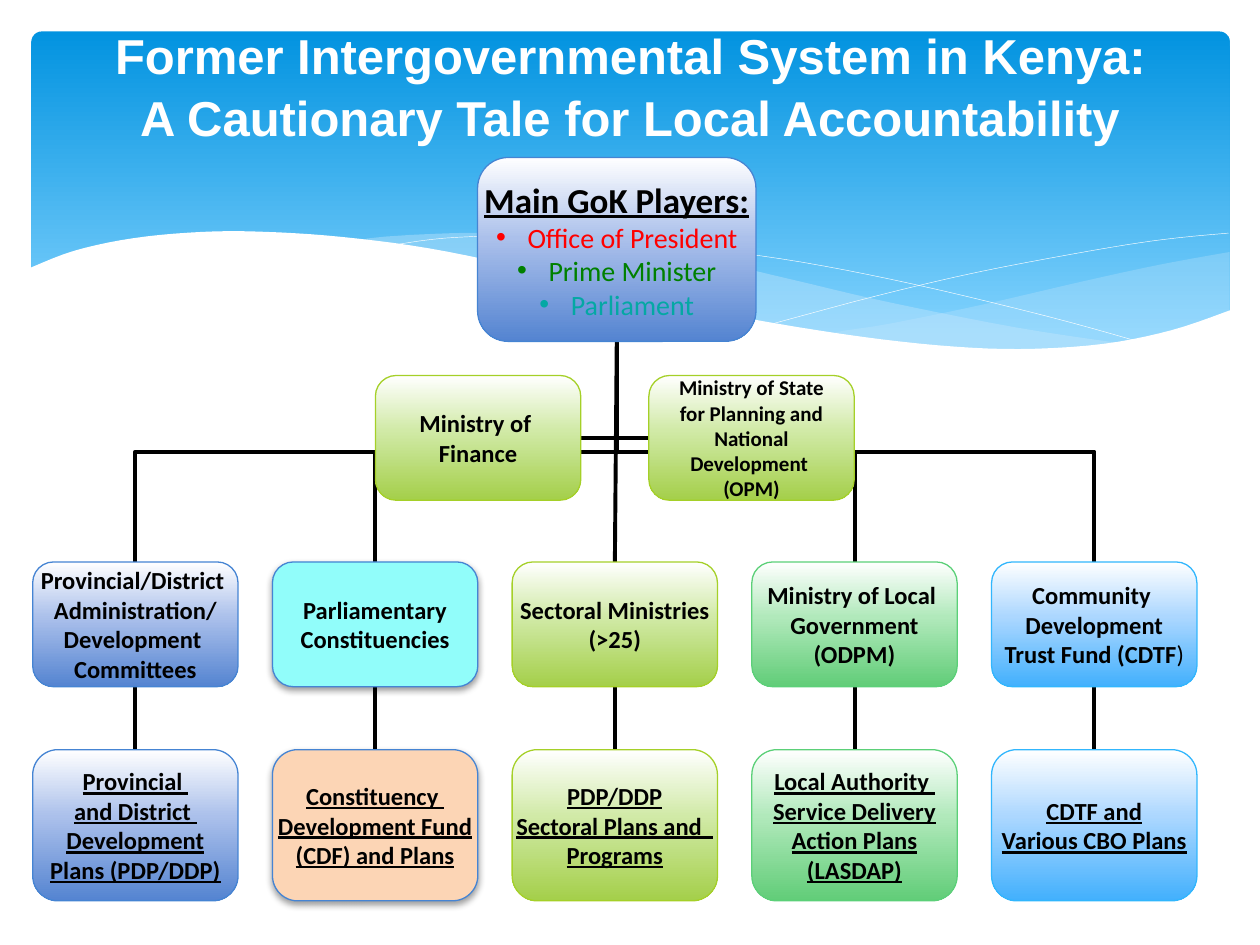
from dataclasses import dataclass

from lxml import etree
from pptx import Presentation
from pptx.dml.color import RGBColor
from pptx.enum.shapes import MSO_CONNECTOR, MSO_SHAPE
from pptx.enum.text import MSO_ANCHOR, PP_ALIGN
from pptx.oxml.ns import qn
from pptx.util import Inches, Pt

ROUNDED = MSO_SHAPE.ROUNDED_RECTANGLE
STRAIGHT, ELBOW = MSO_CONNECTOR.STRAIGHT, MSO_CONNECTOR.ELBOW
MIDDLE, CENTER = MSO_ANCHOR.MIDDLE, PP_ALIGN.CENTER
TOP, BOTTOM = 0, 2


@dataclass(frozen=True)
class Theme:
    """Colours, fonts and type sizes of the slide."""
    body_font: str = "Calibri"
    title_font: str = "Arial"
    title: int = 28
    title_lead: int = 36
    heading: int = 20
    player: int = 16
    label: int = 14
    small: int = 12
    black: str = "000000"
    white: str = "FFFFFF"
    red: str = "FF0000"
    dark_green: str = "008000"
    teal: str = "04A8A4"
    mist: str = "C6E7FC"
    banner: tuple = ((0, "0293E0"), (90, "83D3FE"))
    blue: tuple = (((0, "FFFFFF"), (44, "ABC0EB"), (100, "5484D1")), "4584D3")
    lime: tuple = (((0, "FFFFFF"), (44, "D1EAA7"), (100, "A4CF4A")), "A5D028")
    green: tuple = (((0, "FFFFFF"), (44, "B1E9BB"), (100, "61CD78")), "5BD078")
    sky: tuple = (((0, "FFFFFF"), (44, "ACD7FF"), (100, "42B0FD")), "31B6FD")
    cyan: tuple = ("91FDFA", "4584D3")
    peach: tuple = ("FCD5B5", "4584D3")


THEME = Theme()

RIGHT_WAVE = [(9.76, 2), (9.21, 2.1), (8.61, 2.23), (7.79, 2.42), (7.06, 2.57), (6.61, 2.65),
              (7.05, 2.71), (7.57, 2.76), (8.14, 2.78), (8.72, 2.74), (9.21, 2.65), (9.76, 2.47)]
LONG_WAVE = [(8.93, 2.73), (8.07, 2.6), (7.06, 2.4), (6.29, 2.22), (5.55, 2.05), (4.89, 1.94),
             (4.2, 1.87), (3.61, 1.85), (2.86, 1.91), (3.62, 2.03), (4.49, 2.22), (5.3, 2.4),
             (6.18, 2.58), (6.95, 2.7), (7.61, 2.77), (8.28, 2.78), (8.93, 2.73)]
FALLING_LINE = [(3.09, 1.95), (3.53, 1.89), (4.16, 1.87), (4.89, 1.9), (5.56, 1.97),
                (6.36, 2.08), (7.27, 2.26), (8.31, 2.51), (9.07, 2.72)]
RISING_LINE = [(6.13, 2.57), (6.95, 2.35), (7.76, 2.16), (8.66, 1.99), (9.24, 1.9), (9.75, 1.85)]
WHITE_WAVE = [(9.77, 2.46), (9.3, 2.62), (8.75, 2.73), (8.09, 2.77), (7.44, 2.74), (6.68, 2.65),
              (5.79, 2.5), (5.03, 2.33), (4.18, 2.13), (3.4, 1.97), (2.71, 1.88), (2.11, 1.84),
              (1.61, 1.84), (1.06, 1.89), (0.59, 1.99), (0.23, 2.13)]


def rgb(color):
    """Turn a hex string into a colour."""
    return RGBColor.from_string(color)


def append(parent, tag, **attributes):
    """Append a DrawingML element with the given attributes."""
    values = {name: str(value) for name, value in attributes.items()}
    return etree.SubElement(parent, qn(tag), values)


def paint(shape, fill):
    """Fill a shape with one colour, or downwards with gradient stops."""
    if isinstance(fill, str):
        shape.fill.solid()
        shape.fill.fore_color.rgb = rgb(fill)
        return
    shape.fill.gradient()
    shape.fill.gradient_angle = 270
    stops = shape.element.spPr.find(".//" + qn("a:gsLst"))
    for stop in list(stops):
        stops.remove(stop)
    for position, color in fill:
        append(append(stops, "a:gs", pos=position * 1000), "a:srgbClr", val=color)


def smooth_points(points, steps=5):
    """Interpolate a Catmull-Rom curve through the points."""
    padded = [points[0], *points, points[-1]]
    curve = [points[0]]
    for a, b, c, d in zip(padded, padded[1:], padded[2:], padded[3:]):
        for step in range(1, steps + 1):
            t = step / steps
            curve.append(tuple(
                0.5 * (2 * q + (r - p) * t + (2 * p - 5 * q + 4 * r - s) * t ** 2
                       + (3 * q - p - 3 * r + s) * t ** 3)
                for p, q, r, s in zip(a, b, c, d)))
    return curve


def add_curve(page, points, fill=None, alpha=100, corners=()):
    """Draw a filled wave, or an open white hairline without a fill."""
    outline = [(Inches(x), Inches(y)) for x, y in [*smooth_points(points), *corners]]
    builder = page.shapes.build_freeform(*outline[0], scale=1.0)
    builder.add_line_segments(outline[1:], close=fill is not None)
    curve = builder.convert_to_shape()
    curve.shadow.inherit = False
    if fill:
        paint(curve, fill)
        curve.line.fill.background()
        color = curve.element.spPr.find(qn("a:solidFill")).find(qn("a:srgbClr"))
        append(color, "a:alpha", val=alpha * 1000)
    else:
        curve.fill.background()
        curve.line.color.rgb = rgb(THEME.white)
        curve.line.width = Pt(0.25)


def add_span(para, text, color=THEME.black, **formats):
    """Add a run of text with the given font values."""
    span = para.add_run()
    span.text = text
    for name, value in {"name": THEME.body_font, **formats}.items():
        setattr(span.font, name, value)
    span.font.color.rgb = rgb(color)


def next_para(frame, first):
    """Return the first paragraph or a new one, centred."""
    para = frame.paragraphs[0] if first else frame.add_paragraph()
    para.alignment = CENTER
    return para


def set_frame(frame, wrap):
    """Centre the text vertically without margins."""
    margins = {f"margin_{side}": 0 for side in ("left", "top", "right", "bottom")}
    for name, value in {"word_wrap": wrap, "vertical_anchor": MIDDLE, **margins}.items():
        setattr(frame, name, value)


def add_box(page, area, lines, style, size=THEME.label, underline=False):
    """Add a rounded box with centred bold lines; flat fills cast a shadow."""
    fill, border = style
    box = page.shapes.add_shape(ROUNDED, *map(Inches, area))
    box.shadow.inherit = False
    paint(box, fill)
    box.line.color.rgb = rgb(border)
    box.line.width = Pt(0.75)
    if isinstance(fill, str):
        effects = box.element.spPr.find(qn("a:effectLst"))
        shadow = append(effects, "a:outerShdw", blurRad=Pt(4), dist=Pt(2),
                        dir=5400000, rotWithShape=0)
        append(append(shadow, "a:srgbClr", val=THEME.black), "a:alpha", val=38000)
    set_frame(box.text_frame, False)
    for index, line in enumerate(lines):
        add_span(next_para(box.text_frame, index == 0), line,
                 size=Pt(size), bold=True, underline=underline)
    return box


def add_player(box, name, color):
    """Add a bulleted player to the top box."""
    para = next_para(box.text_frame, False)
    properties = para._p.get_or_add_pPr()
    properties.set("marL", str(Inches(0.25)))
    properties.set("indent", str(-Inches(0.25)))
    append(properties, "a:buFont", typeface="Arial")
    append(properties, "a:buChar", char="•")
    add_span(para, name, color, size=Pt(THEME.player), bold=False, underline=False)


def add_line(page, behind, kind, start=(0, 0), end=(0, 0)):
    """Add a black connector behind the given box."""
    line = page.shapes.add_connector(kind, *start, *end)
    line.line.color.rgb = rgb(THEME.black)
    line.line.width = Pt(2.25)
    append(line.element.spPr, "a:effectLst")
    behind.element.addprevious(line.element)
    return line


def join(page, lower, upper):
    """Join the top of one box straight to the bottom of another."""
    line = add_line(page, upper, STRAIGHT)
    line.begin_connect(lower, TOP)
    line.end_connect(upper, BOTTOM)


def add_branch(page, parent, child):
    """Draw an elbow down, across and down from parent to child."""
    x1, y1 = parent.left + parent.width // 2, parent.top + parent.height
    x2, y2 = child.left + child.width // 2, child.top
    length, breadth = y2 - y1, abs(x2 - x1)
    line = add_line(page, parent, ELBOW)
    line.left, line.top = (x1 + x2 - length) // 2, (y1 + y2 - breadth) // 2
    line.width, line.height = length, breadth
    frame = line.element.spPr.find(qn("a:xfrm"))
    frame.set("rot", "5400000" if x2 < x1 else "16200000")
    if x2 > x1:
        frame.set("flipH", "1")


def add_side_link(page, parent, ministry, edge):
    """Draw one bend from a ministry's inner edge up to the parent."""
    start = edge, ministry.top + ministry.height // 2
    end = parent.left + parent.width // 2, parent.top + parent.height
    line = add_line(page, parent, ELBOW, start, end)
    line.element.spPr.find(qn("a:prstGeom")).set("prst", "bentConnector2")


def add_backdrop(page):
    """Draw the blue banner and its waves."""
    banner = page.shapes.add_shape(ROUNDED, *map(Inches, (0.25, 0.25, 9.51, 2.7)))
    banner.adjustments[0] = 0.03
    banner.shadow.inherit = False
    paint(banner, THEME.banner)
    banner.line.fill.background()
    add_curve(page, RIGHT_WAVE, THEME.mist, 29)
    add_curve(page, LONG_WAVE, THEME.mist, 40)
    add_curve(page, FALLING_LINE)
    add_curve(page, RISING_LINE)
    add_curve(page, WHITE_WAVE, THEME.white, corners=[(0.23, 3.29), (9.77, 3.29)])


def add_title(page):
    """Add the two-line title."""
    box = page.shapes.add_textbox(*map(Inches, (0.5, 0, 9, 1.25)))
    set_frame(box.text_frame, True)
    para = next_para(box.text_frame, True)
    add_span(para, " ", THEME.white, size=Pt(THEME.title_lead), bold=True)
    formats = {"name": THEME.title_font, "size": Pt(THEME.title), "bold": True}
    add_span(para, "Former Intergovernmental System in Kenya: ", THEME.white, **formats)
    para.add_line_break()
    add_span(para, "A Cautionary Tale for Local Accountability", THEME.white, **formats)


def main():
    """Build the slide and save it."""
    deck = Presentation()
    deck.slide_width, deck.slide_height = Inches(10), Inches(7.5)
    page = deck.slides.add_slide(deck.slide_layouts[6])
    add_backdrop(page)
    add_title(page)

    players = add_box(page, (3.79, 1.25, 2.21, 1.46), ["Main GoK Players:"],
                      THEME.blue, THEME.heading, True)
    for name, color in (("Office of President", THEME.red),
                        ("Prime Minister", THEME.dark_green), ("Parliament", THEME.teal)):
        add_player(players, name, color)
    finance = add_box(page, (2.98, 2.98, 1.63, 0.99), ["Ministry of ", "Finance"], THEME.lime)
    planning = add_box(page, (5.15, 2.98, 1.63, 0.99),
                       ["Ministry of State", "for Planning and", " National ", "Development ",
                        "(OPM)"], THEME.lime, THEME.small)
    add_side_link(page, players, finance, finance.left + finance.width)
    add_side_link(page, players, planning, planning.left)

    columns = [
        (THEME.blue, ["Provincial/District ", "Administration/", "Development ", "Committees"],
         THEME.blue, ["Provincial ", "and District ", "Development", "Plans (PDP/DDP)"]),
        (THEME.cyan, ["Parliamentary", "Constituencies"],
         THEME.peach, ["Constituency ", "Development Fund", "(CDF) and Plans"]),
        (THEME.lime, ["Sectoral Ministries", "(>25)"],
         THEME.lime, ["PDP/DDP", "Sectoral Plans and  ", "Programs"]),
        (THEME.green, ["Ministry of Local ", "Government", "(ODPM)"],
         THEME.green, ["Local Authority ", "Service Delivery", "Action Plans", "(LASDAP)"]),
        (THEME.sky, ["Community ", "Development", "Trust Fund (CDTF"],
         THEME.sky, ["CDTF and", "Various CBO Plans"]),
    ]
    for index, (body_style, body_lines, plan_style, plan_lines) in enumerate(columns):
        left = 0.26 + index * 7.61 / 4
        body = add_box(page, (left, 4.46, 1.63, 0.99), body_lines, body_style)
        plan = add_box(page, (left, 5.95, 1.63, 1.2), plan_lines, plan_style, underline=True)
        join(page, plan, body)
        if index == 2:
            join(page, body, players)
        else:
            add_branch(page, players, body)
    add_span(body.text_frame.paragraphs[-1], ")", size=Pt(THEME.label), bold=False)
    deck.save("out.pptx")


if __name__ == "__main__":
    main()
